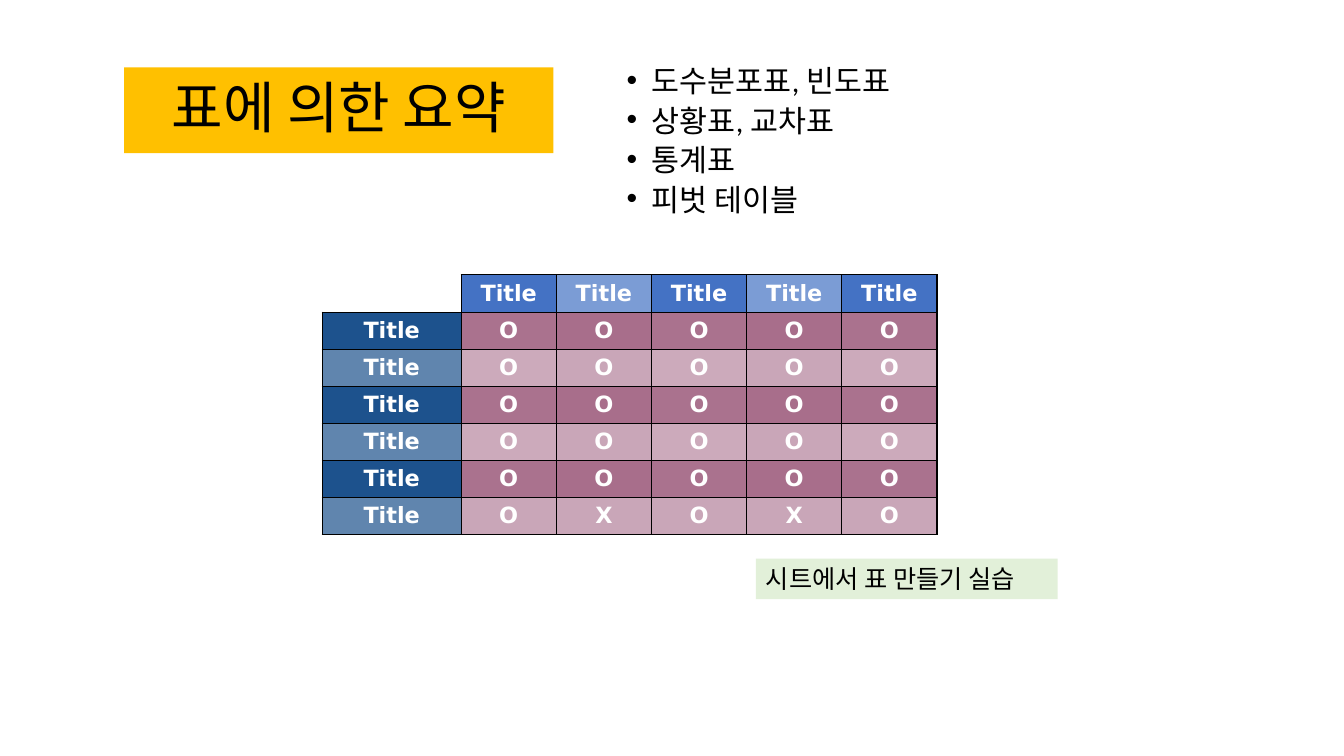
from dataclasses import dataclass

from lxml import etree
from pptx import Presentation
from pptx.dml.color import RGBColor
from pptx.enum import shapes, text
from pptx.oxml import ns
from pptx.util import Pt


@dataclass(frozen=True)
class Theme:
    font: str = "Calibri"
    grid_font: str = "DejaVu Sans"
    ink: str = "000000"
    light: str = "FFFFFF"
    gold: str = "FFC000"
    mint: str = "E2F0D9"
    head: str = "4472C4"
    side: str = "1D528D"
    body: str = "954F72"
    title_size: float = 40
    list_size: float = 21.7
    note_size: float = 18
    grid_size: float = 16


THEME = Theme()
MARKS = ["OOOOO"] * 5 + ["OXOXO"]


def style(para, size, color=THEME.ink, font=THEME.font, bold=False):
    para.font.size = Pt(size)
    para.font.name = font
    para.font.bold = bold
    para.font.color.rgb = RGBColor.from_string(color)


def sub(parent, tag, **attrs):
    return etree.SubElement(parent, ns.qn(tag), **attrs)


def paint(cell, color, alpha=100):
    """Fill a cell, with alpha as percent opacity."""
    cell.fill.solid()
    cell.fill.fore_color.rgb = RGBColor.from_string(color)
    if alpha < 100:
        fill = cell._tc.get_or_add_tcPr().find(ns.qn("a:solidFill"))
        sub(fill[0], "a:alpha", val=str(alpha * 1000))


def border(cell, drawn="LRTB"):
    """Draw thin lines on the named sides and clear the others."""
    props = cell._tc.get_or_add_tcPr()
    for side in "LRTB":
        line = sub(props, f"a:ln{side}", w=str(Pt(1)))
        if side in drawn:
            sub(sub(line, "a:solidFill"), "a:srgbClr", val=THEME.ink)
        else:
            sub(line, "a:noFill")


def add_panel(slide, box, words, color, size, align, anchor):
    panel = slide.shapes.add_shape(shapes.MSO_SHAPE.RECTANGLE, *map(Pt, box))
    panel.shadow.inherit = False
    panel.fill.solid()
    panel.fill.fore_color.rgb = RGBColor.from_string(color)
    panel.line.fill.background()
    frame = panel.text_frame
    frame.word_wrap = True
    frame.vertical_anchor = anchor
    para = frame.paragraphs[0]
    para.text = words
    para.alignment = align
    style(para, size)
    return para


def add_list(slide, box, items):
    frame = slide.shapes.add_textbox(*map(Pt, box)).text_frame
    frame.word_wrap = True
    for i, item in enumerate(items):
        para = frame.add_paragraph() if i else frame.paragraphs[0]
        para.text = item
        para.line_spacing = 0.7
        para.space_before = Pt(10)
        style(para, THEME.list_size)
        props = para._p.get_or_add_pPr()
        props.set("marL", str(Pt(18)))
        props.set("indent", str(-Pt(18)))
        # The bullet must come before the paragraph's default run properties.
        run = props.find(ns.qn("a:defRPr"))
        for mark in (sub(props, "a:buFont", typeface="Arial"),
                     sub(props, "a:buChar", char="•")):
            run.addprevious(mark)


def tint(row, col):
    """Give the colour and opacity of a cell, alternating along the grid."""
    if row == 0:
        return THEME.head, 100 if col % 2 else 70
    if col == 0:
        return THEME.side, 100 if row % 2 else 70
    if row == len(MARKS):
        return THEME.body, 50
    return THEME.body, (80 if row % 2 else 48) + (0 if col % 2 else 2)


def add_grid(slide, box, first):
    """Place the table, whose first column has the given width."""
    left, top, width, height = box
    rows, cols = len(MARKS) + 1, len(MARKS[0]) + 1
    table = slide.shapes.add_table(rows, cols, *map(Pt, box)).table
    table.first_row = table.horz_banding = False
    for i, col in enumerate(table.columns):
        col.width = Pt((width - first) / (cols - 1) if i else first)
    for row in table.rows:
        row.height = Pt(height / rows)
    for r in range(rows):
        for c in range(cols):
            cell = table.cell(r, c)
            para = cell.text_frame.paragraphs[0]
            if r == c == 0:
                border(cell, "RB")
                cell.fill.background()
                sub(para._p, "a:endParaRPr", sz=str(THEME.grid_size * 100))
                continue
            border(cell)
            paint(cell, *tint(r, c))
            cell.vertical_anchor = text.MSO_ANCHOR.MIDDLE
            para.text = MARKS[r - 1][c - 1] if r and c else "Title"
            para.alignment = text.PP_ALIGN.CENTER
            style(para, THEME.grid_size, THEME.light, THEME.grid_font, True)


def main():
    deck = Presentation()
    deck.slide_width, deck.slide_height = Pt(960), Pt(540)
    slide = deck.slides.add_slide(deck.slide_layouts[6])
    add_grid(slide, (230.2, 196.3, 439.2, 185), 99.2)
    title = add_panel(slide, (88.6, 48.2, 306.7, 61.2), "표에 의한 요약", THEME.gold,
                      THEME.title_size, text.PP_ALIGN.CENTER, text.MSO_ANCHOR.MIDDLE)
    title.line_spacing = 0.9
    add_list(slide, (440.6, 48.2, 226, 134.6),
             ["도수분포표, 빈도표", "상황표, 교차표", "통계표", "피벗 테이블"])
    add_panel(slide, (540, 399, 215.5, 29), "시트에서 표 만들기 실습", THEME.mint,
              THEME.note_size, text.PP_ALIGN.LEFT, text.MSO_ANCHOR.TOP)
    deck.save("out.pptx")


if __name__ == "__main__":
    main()
